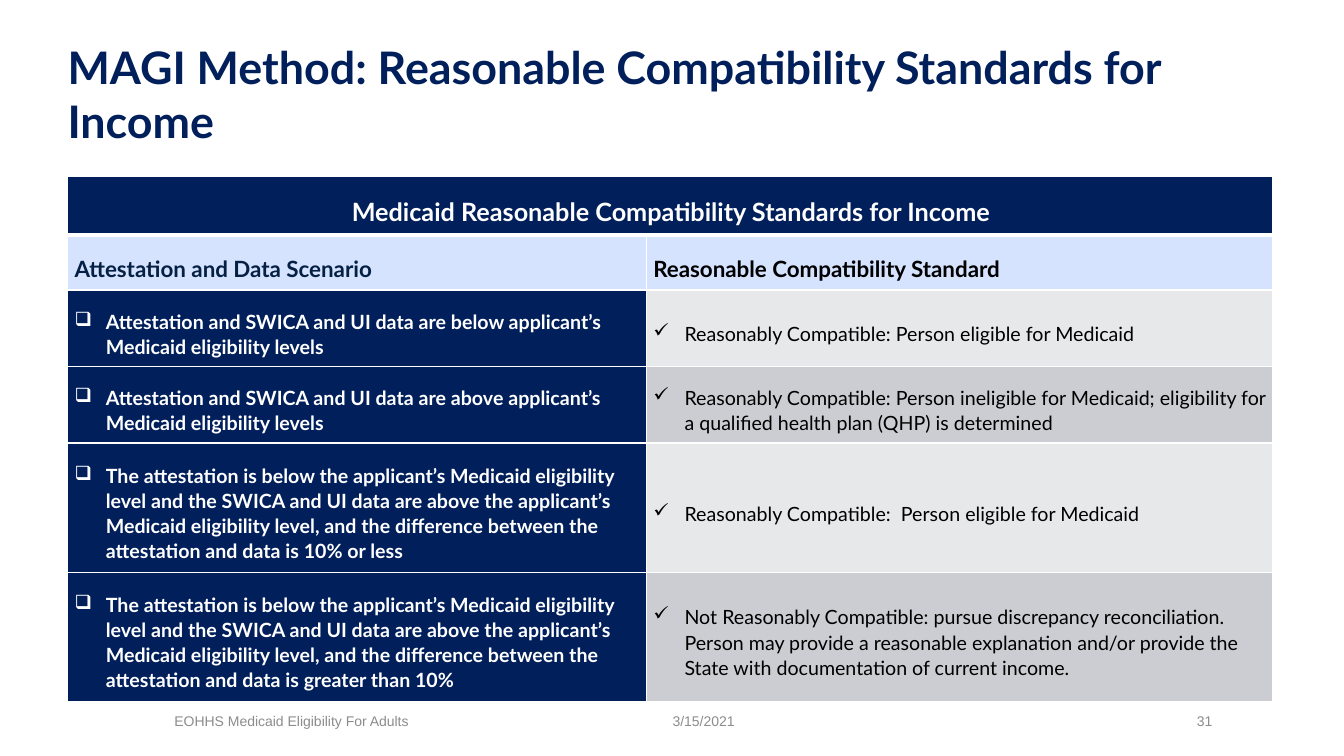
import pptx
import pptx.util
import pptx.dml.color
import pptx.enum.text
import pptx.oxml.ns
from dataclasses import dataclass
from lxml import etree

Inches = pptx.util.Inches
Pt = pptx.util.Pt
ALIGN = pptx.enum.text.PP_ALIGN
MIDDLE = pptx.enum.text.MSO_ANCHOR.MIDDLE


@dataclass
class Theme:
    navy: str = "001F5B"
    heading: str = "052043"
    pale: str = "D5E3FF"
    light: str = "E7E8EA"
    dark: str = "CCCDD2"
    white: str = "FFFFFF"
    black: str = "000000"
    muted: str = "8C8C8C"
    face: str = "Lato"
    footer_face: str = "Arial"
    title_size: int = 32
    header_size: int = 18
    subheader_size: int = 16
    body_size: int = 14
    footer_size: int = 10


theme = Theme()


def write_text(frame, text, face, size, color, bold=False, bullet=None):
    frame.word_wrap = True
    para = frame.paragraphs[0]
    para.text = text
    if bullet:
        properties = para._p.get_or_add_pPr()
        properties.set("marL", str(Inches(0.31)))
        properties.set("indent", str(-Inches(0.31)))
        etree.SubElement(properties, pptx.oxml.ns.qn("a:buChar"), char=bullet)
    para.font.name = face
    para.font.size = Pt(size)
    para.font.bold = bold
    para.font.color.rgb = pptx.dml.color.RGBColor.from_string(color)
    return para


def style_cell(cell, fill, borders):
    cell.vertical_anchor = MIDDLE
    cell.margin_left = Inches(0.07)
    cell.margin_top = Inches(0.18)
    cell.margin_right = Inches(0.05)
    cell.margin_bottom = Inches(0.08)
    properties = cell._tc.get_or_add_tcPr()
    for side, width in borders.items():
        line = etree.SubElement(properties, pptx.oxml.ns.qn(f"a:ln{side}"), w=str(Pt(width)))
        solid = etree.SubElement(line, pptx.oxml.ns.qn("a:solidFill"))
        etree.SubElement(solid, pptx.oxml.ns.qn("a:srgbClr"), val=theme.white)
    cell.fill.solid()
    cell.fill.fore_color.rgb = pptx.dml.color.RGBColor.from_string(fill)


deck = pptx.Presentation()
deck.slide_width = Inches(13.33)
deck.slide_height = Inches(7.5)
page = deck.slides.add_slide(deck.slide_layouts[6])

title = "MAGI Method: Reasonable Compatibility Standards for Income"
footer = (theme.footer_face, theme.footer_size, theme.muted)
labels = [
    (0.67, 0.3, 12, 1.25, title, (theme.face, theme.title_size, theme.navy, True)),
    (6.67, 6.95, 3.11, 0.4, "3/15/2021", footer),
    (1.73, 6.95, 4.22, 0.4, "EOHHS Medicaid Eligibility For Adults", footer),
    (11.87, 6.95, 0.8, 0.4, "31", footer),
]
for left, top, width, height, text, style in labels:
    box = page.shapes.add_textbox(Inches(left), Inches(top), Inches(width), Inches(height))
    frame = box.text_frame
    frame.margin_left = frame.margin_top = frame.margin_right = frame.margin_bottom = 0
    frame.vertical_anchor = MIDDLE
    write_text(frame, text, *style)

mixed_case = (
    "The attestation is below the applicant’s Medicaid eligibility level and the SWICA "
    "and UI data are above the applicant’s Medicaid eligibility level, and the difference "
    "between the attestation and data is "
)
rows = [
    ("Medicaid Reasonable Compatibility Standards for Income", ""),
    ("Attestation and Data Scenario", "Reasonable Compatibility Standard"),
    (
        "Attestation and SWICA and UI data are below applicant’s Medicaid eligibility levels",
        "Reasonably Compatible: Person eligible for Medicaid",
    ),
    (
        "Attestation and SWICA and UI data are above applicant’s Medicaid eligibility levels",
        "Reasonably Compatible: Person ineligible for Medicaid; eligibility for a qualified "
        "health plan (QHP) is determined",
    ),
    (mixed_case + "10% or less", "Reasonably Compatible:  Person eligible for Medicaid"),
    (
        mixed_case + "greater than 10%",
        "Not Reasonably Compatible: pursue discrepancy reconciliation. Person may provide a "
        "reasonable explanation and/or provide the State with documentation of current income.",
    ),
]
column_widths = [5.74, 6.21]
row_heights = [0.57, 0.53, 0.75, 0.76, 1.28, 1.28]

table = page.shapes.add_table(
    len(rows), 2, Inches(0.67), Inches(1.75),
    Inches(sum(column_widths)), Inches(sum(row_heights)),
).table
for column, width in zip(table.columns, column_widths):
    column.width = Inches(width)
for row, height in zip(table.rows, row_heights):
    row.height = Inches(height)
table.cell(0, 0).merge(table.cell(0, 1))

for row_index, texts in enumerate(rows):
    for column_index, text in enumerate(texts):
        cell = table.cell(row_index, column_index)
        bullet = None
        bold = True
        if row_index == 0:
            fill, color, size = theme.navy, theme.white, theme.header_size
        elif row_index == 1:
            fill, size = theme.pale, theme.subheader_size
            color = (theme.heading, theme.black)[column_index]
        elif column_index == 0:
            fill, color, size = theme.navy, theme.white, theme.body_size
            bullet = "❑"
        else:
            fill = (theme.light, theme.dark)[row_index % 2]
            color, size = theme.black, theme.body_size
            bullet, bold = "✓", False
        borders = {
            "L": 1,
            "R": 1,
            "T": 3 if row_index == 1 else 1,
            "B": 3 if row_index == 0 else 1,
        }
        style_cell(cell, fill, borders)
        if not cell.is_spanned:
            para = write_text(cell.text_frame, text, theme.face, size, color, bold, bullet)
            para.line_spacing = 1.07
            para.alignment = ALIGN.CENTER if row_index == 0 else ALIGN.LEFT

deck.save("out.pptx")
